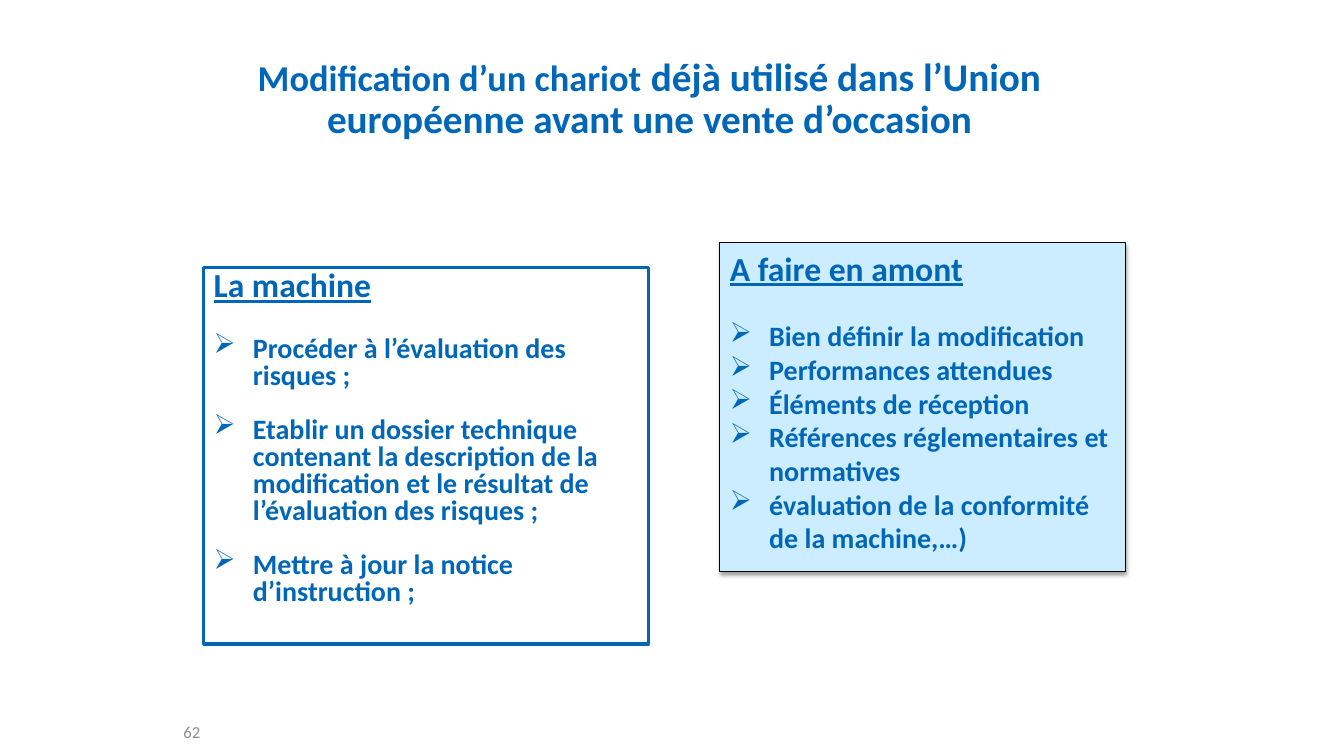
"""Build the slide on modifying a used truck before resale."""
from lxml.etree import SubElement
from pptx import Presentation
from pptx.dml.color import RGBColor
from pptx.enum.shapes import MSO_SHAPE
from pptx.enum.text import MSO_ANCHOR, MSO_AUTO_SIZE, PP_ALIGN
from pptx.oxml.ns import qn
from pptx.util import Inches, Pt

BLUE = RGBColor(0x00, 0x67, 0xB8)
PALE = RGBColor(0xCC, 0xEC, 0xFF)
GREY = RGBColor(0x8C, 0x8C, 0x8C)
BLACK = RGBColor(0x00, 0x00, 0x00)


def add_run(para, text, size, color=BLUE, bold=True, under=False):
    run = para.add_run()
    run.text = text
    font = run.font
    font.name, font.size, font.bold = "Calibri", Pt(size), bold
    font.underline = under
    font.color.rgb = color


def add_panel(spot, head, items, pitch, first, gap):
    box = slide.shapes.add_shape(MSO_SHAPE.RECTANGLE, *map(Inches, spot))
    box.shadow.inherit = False
    frame = box.text_frame
    frame.word_wrap = True
    frame.vertical_anchor = MSO_ANCHOR.TOP
    para = frame.paragraphs[0]
    add_run(para, head, 24, under=True)
    for i, item in enumerate(items):
        para = frame.add_paragraph()
        props = para._p.get_or_add_pPr()
        props.set("marL", str(Inches(0.39)))
        props.set("indent", str(-Inches(0.39)))
        SubElement(props, qn("a:buChar"), char="➢")
        para.space_before = Pt(gap if i else first)
        add_run(para, item, 20)
    for para in frame.paragraphs:
        para.alignment = PP_ALIGN.LEFT
        para.line_spacing = pitch
    return box


deck = Presentation()
deck.slide_width, deck.slide_height = Inches(13.33), Inches(7.5)
slide = deck.slides.add_slide(deck.slide_layouts[5])

title = slide.shapes.title
title.left, title.top = Inches(1.94), Inches(0.52)
title.width, title.height = Inches(9), Inches(0.58)
frame = title.text_frame
frame.word_wrap = True
frame.auto_size = MSO_AUTO_SIZE.NONE
frame.vertical_anchor = MSO_ANCHOR.TOP
para = frame.paragraphs[0]
para.alignment = PP_ALIGN.CENTER
para.line_spacing = 0.9
add_run(para, "Modification d’un chariot", 26)
add_run(para, " déjà utilisé dans l’Union européenne avant une vente d’occasion", 28)

number = slide.shapes.add_textbox(Inches(1.72), Inches(7.06), Inches(0.54), Inches(0.4))
frame = number.text_frame
frame.word_wrap = True
frame.vertical_anchor = MSO_ANCHOR.MIDDLE
add_run(frame.paragraphs[0], "62", 12, GREY, False)

tasks = [
    "Procéder à l’évaluation des risques ;",
    "Etablir un dossier technique contenant la description de la modification "
    "et le résultat de l’évaluation des risques ;",
    "Mettre à jour la notice d’instruction ;",
]
left = add_panel((2.02, 2.65, 4.41, 3.74), "La machine", tasks, 0.8, 23.4, 19.5)
left.fill.background()
left.line.color.rgb = BLUE
left.line.width = Pt(2.25)

steps = [
    "Bien définir la modification",
    "Performances attendues",
    "Éléments de réception",
    "Références réglementaires et normatives",
    "évaluation de la conformité de la machine,…)",
]
right = add_panel((7.14, 2.41, 4.02, 3.26), "A faire en amont", steps, 1, 22, 0)
right.fill.solid()
right.fill.fore_color.rgb = PALE
right.line.color.rgb = BLACK
right.line.width = Pt(0.75)
effects = right._element.spPr.find(qn("a:effectLst"))
shade = SubElement(effects, qn("a:outerShdw"), blurRad=str(Pt(3.1)),
                   dist=str(Pt(1.6)), dir="5400000", rotWithShape="0")
tint = SubElement(shade, qn("a:srgbClr"), val=str(BLACK))
SubElement(tint, qn("a:alpha"), val="38000")

deck.save("out.pptx")
